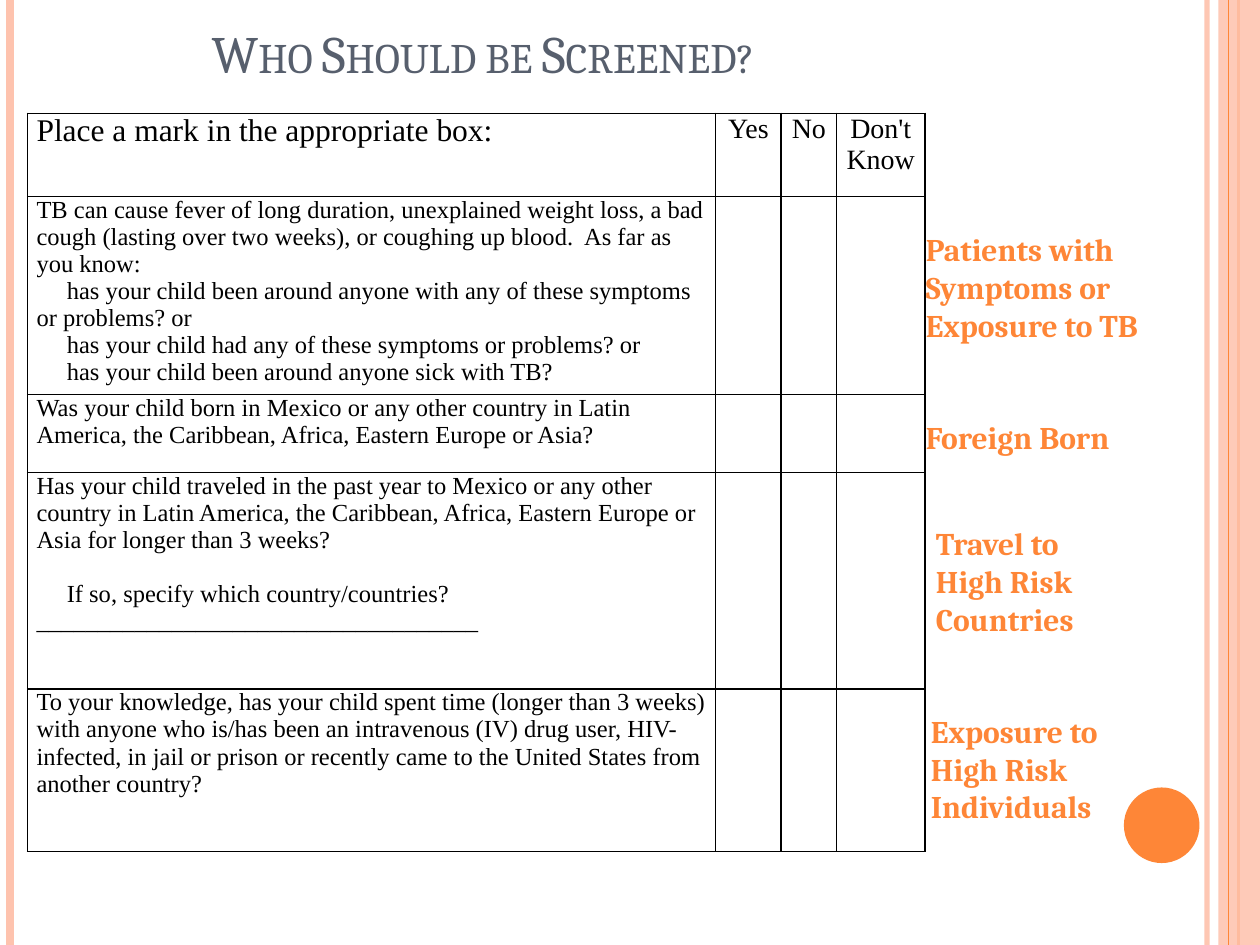
import pptx
import pptx.util
import pptx.dml.color
import pptx.enum.shapes
import pptx.enum.text
import pptx.oxml
import pptx.oxml.ns
import lxml.etree

Inches = pptx.util.Inches
Pt = pptx.util.Pt
RGBColor = pptx.dml.color.RGBColor
PP_ALIGN = pptx.enum.text.PP_ALIGN
qn = pptx.oxml.ns.qn

ORANGE = RGBColor(0xFE, 0x86, 0x37)
PEACH = RGBColor(0xFE, 0xC3, 0xAE)
SLATE = RGBColor(0x57, 0x5F, 0x6D)
BLACK = RGBColor(0, 0, 0)

SLIDE_HEIGHT = 7.5
INDENT = Inches(0.24)
COLUMN_WIDTHS = [5.46, 0.52, 0.44, 0.7]
ROW_HEIGHTS = [0.66, 1.57, 0.62, 1.72, 1.29]
CELL_MARGINS = {
    "margin_left": Inches(0.07),
    "margin_right": Inches(0.07),
    "margin_top": 0,
    "margin_bottom": 0,
}
TITLE_FONT = {"name": "Cambria", "size": Pt(30), "bold": False}
LABEL_FONT = {"name": "Cambria", "size": Pt(18), "bold": True}
TABLE_FONT = {"name": "Times New Roman", "bold": False}

ANSWERS = ["Yes", "No", "Don't Know"]
QUESTIONS = [
    [
        "TB can cause fever of long duration, unexplained weight loss, a bad cough "
        "(lasting over two weeks), or coughing up blood.  As far as you know:",
        "has your child been around anyone with any of these symptoms or problems? or",
        "has your child had any of these symptoms or problems? or",
        "has your child been around anyone sick with TB?",
    ],
    [
        "Was your child born in Mexico or any other country in Latin America, "
        "the Caribbean, Africa, Eastern Europe or Asia?",
    ],
    [
        "Has your child traveled in the past year to Mexico or any other country in "
        "Latin America, the Caribbean, Africa, Eastern Europe or Asia for longer "
        "than 3 weeks?",
        "If so, specify which country/countries?" + "_" * 36,
    ],
    [
        "To your knowledge, has your child spent time (longer than 3 weeks) with "
        "anyone who is/has been an intravenous (IV) drug user, HIV-infected, in jail "
        "or prison or recently came to the United States from another country?",
    ],
]
RISK_GROUPS = [
    ((7.25, 1.78, 2.23, 1.01), ["Patients with", "Symptoms or", "Exposure to TB"]),
    ((7.25, 3.27, 1.96, 0.4), ["Foreign Born"]),
    ((7.33, 4.11, 1.57, 1.01), ["Travel to", "High Risk", "Countries"]),
    ((7.29, 5.6, 1.78, 1.01), ["Exposure to", "High Risk", "Individuals"]),
]


def apply(target, values):
    for name, value in values.items():
        setattr(target, name, value)


def set_font(font, values, color):
    apply(font, values)
    font.color.rgb = color


def set_alpha(properties, percent):
    color = properties.find(".//" + qn("a:srgbClr"))
    lxml.etree.SubElement(color, qn("a:alpha"), val=str(percent * 1000))


def add_stripe(slide, x, color, width, alpha=100):
    stripe = slide.shapes.add_connector(
        pptx.enum.shapes.MSO_CONNECTOR.STRAIGHT,
        Inches(x), 0, Inches(x), Inches(SLIDE_HEIGHT),
    )
    stripe.line.color.rgb = color
    stripe.line.width = Pt(width)
    properties = stripe._element.spPr
    if alpha < 100:
        set_alpha(properties, alpha)
    lxml.etree.SubElement(properties, qn("a:effectLst"))


def add_filled(slide, preset, box, color):
    filled = slide.shapes.add_shape(preset, *map(Inches, box))
    filled.shadow.inherit = False
    filled.fill.solid()
    filled.fill.fore_color.rgb = color
    filled.line.fill.background()
    return filled


def add_frame(slide):
    presets = pptx.enum.shapes.MSO_SHAPE
    add_stripe(slide, 9.58, PEACH, 3, 93)
    add_stripe(slide, 0.08, PEACH, 4.5)
    add_stripe(slide, 9.83, ORANGE, 1.5)
    band = add_filled(slide, presets.RECTANGLE, (9.67, 0, 0.33, SLIDE_HEIGHT), PEACH)
    set_alpha(band._element.spPr, 87)
    add_stripe(slide, 9.75, ORANGE, 0.75)
    add_filled(slide, presets.OVAL, (8.92, 6.25, 0.6, 0.6), ORANGE)


def add_title(slide, box):
    title = slide.shapes.title
    apply(title, dict(zip(("left", "top", "width", "height"), map(Inches, box))))
    frame = title.text_frame
    frame.text = "Who Should be Screened?"
    frame.vertical_anchor = pptx.enum.text.MSO_ANCHOR.BOTTOM
    heading = frame.paragraphs[0]
    heading.alignment = PP_ALIGN.LEFT
    set_font(heading.runs[0].font, TITLE_FONT, SLATE)
    heading.runs[0]._r.get_or_add_rPr().set("cap", "small")


def add_borders(cell):
    properties = cell._tc.get_or_add_tcPr()
    for side in ("lnL", "lnR", "lnT", "lnB"):
        border = lxml.etree.SubElement(properties, qn("a:" + side), w=str(Pt(1)))
        fill = lxml.etree.SubElement(border, qn("a:solidFill"))
        lxml.etree.SubElement(fill, qn("a:srgbClr"), val=str(BLACK))


def fill_cell(cell, lines, size, alignment=PP_ALIGN.LEFT):
    cell.text = "\n".join(lines)
    for position, paragraph in enumerate(cell.text_frame.paragraphs):
        paragraph.alignment = alignment
        if position:
            paragraph._p.get_or_add_pPr().set("indent", str(INDENT))
        set_font(paragraph.font, {**TABLE_FONT, "size": Pt(size)}, BLACK)
        for run in paragraph.runs:
            set_font(run.font, {**TABLE_FONT, "size": Pt(size)}, BLACK)


def add_questionnaire(slide, left, top):
    table = slide.shapes.add_table(
        len(ROW_HEIGHTS), len(COLUMN_WIDTHS), Inches(left), Inches(top),
        Inches(sum(COLUMN_WIDTHS)), Inches(sum(ROW_HEIGHTS)),
    ).table
    apply(table, {"first_row": False, "horz_banding": False})
    for column, width in zip(table.columns, COLUMN_WIDTHS):
        column.width = Inches(width)
    for row, height in zip(table.rows, ROW_HEIGHTS):
        row.height = Inches(height)
    for cell in table.iter_cells():
        apply(cell, CELL_MARGINS)
        add_borders(cell)
        cell.fill.background()
    fill_cell(table.cell(0, 0), ["Place a mark in the appropriate box:"], 18)
    for column, answer in enumerate(ANSWERS, 1):
        fill_cell(table.cell(0, column), [answer], 16, PP_ALIGN.CENTER)
    for row, question in enumerate(QUESTIONS, 1):
        fill_cell(table.cell(row, 0), question, 14)
    travel_detail = table.cell(3, 0).text_frame.paragraphs[1]
    travel_detail.space_before = Pt(15.4)


def add_risk_group(slide, box, lines):
    frame = slide.shapes.add_textbox(*map(Inches, box)).text_frame
    frame.word_wrap = True
    frame.text = "\n".join(lines)
    for paragraph in frame.paragraphs:
        set_font(paragraph.runs[0].font, LABEL_FONT, ORANGE)


def main():
    presentation = pptx.Presentation()
    presentation.slide_width = Inches(10)
    presentation.slide_height = Inches(SLIDE_HEIGHT)
    slide = presentation.slides.add_slide(presentation.slide_layouts[5])
    add_frame(slide)
    add_title(slide, (1.58, -0.53, 7.5, 1.25))
    add_questionnaire(slide, 0.22, 0.9)
    for box, lines in RISK_GROUPS:
        add_risk_group(slide, box, lines)
    presentation.save("out.pptx")


if __name__ == "__main__":
    main()
